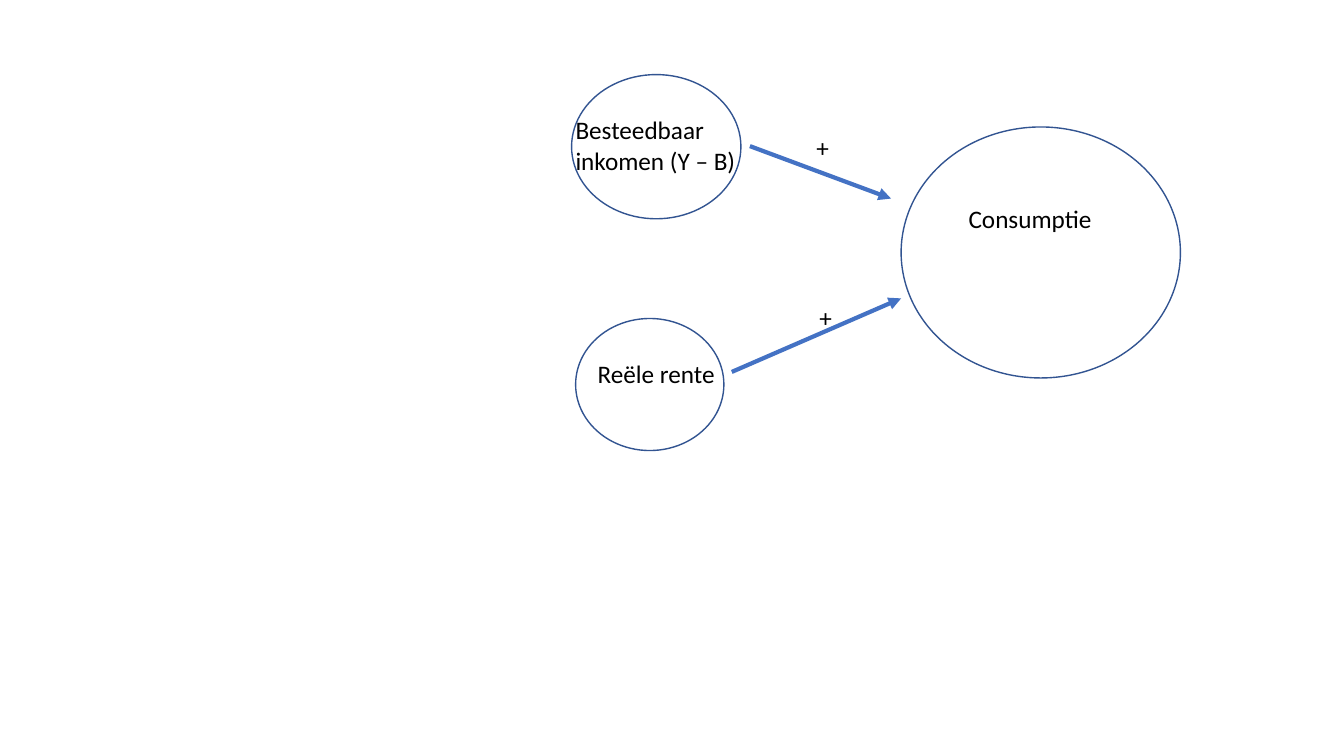
from lxml.etree import SubElement
from pptx import Presentation
from pptx.dml.color import RGBColor
from pptx.enum.shapes import MSO_CONNECTOR, MSO_SHAPE
from pptx.enum.text import MSO_AUTO_SIZE
from pptx.oxml.ns import qn
from pptx.util import Inches, Pt

SLIDE_WIDTH = Inches(13.33)
SLIDE_HEIGHT = Inches(7.5)
COLORS = {"outline": "325491", "arrow": "4472C4", "text": "000000"}
FONT = "Calibri"
LINE_HEIGHT = 5.33


def across(percent):
    return round(SLIDE_WIDTH * percent / 100)


def down(percent):
    return round(SLIDE_HEIGHT * percent / 100)


def box(left, top, width, height):
    return across(left), down(top), across(width), down(height)


def style_line(line, color, width):
    line.color.rgb = RGBColor.from_string(COLORS[color])
    line.width = Pt(width)


def add_circle(slide, bounds):
    shape = slide.shapes.add_shape(MSO_SHAPE.OVAL, *box(*bounds))
    shape.shadow.inherit = False
    shape.fill.background()
    style_line(shape.line, "outline", 1)


def add_label(slide, text, bounds):
    frame = slide.shapes.add_textbox(*box(*bounds)).text_frame
    frame.word_wrap = True
    frame.auto_size = MSO_AUTO_SIZE.SHAPE_TO_FIT_TEXT
    run = frame.paragraphs[0].add_run()
    run.text = text
    run.font.name = FONT
    run.font.size = Pt(18)
    run.font.color.rgb = RGBColor.from_string(COLORS["text"])


def add_factor(slide, text, circle_bounds, label_bounds):
    add_circle(slide, circle_bounds)
    add_label(slide, text, label_bounds)


def add_arrow(slide, start, end):
    connector = slide.shapes.add_connector(
        MSO_CONNECTOR.STRAIGHT,
        across(start[0]), down(start[1]), across(end[0]), down(end[1]),
    )
    style_line(connector.line, "arrow", 3)
    properties = connector.element.spPr
    SubElement(properties.find(qn("a:ln")), qn("a:tailEnd"), type="triangle")
    SubElement(properties, qn("a:effectLst"))


def main():
    presentation = Presentation()
    presentation.slide_width = SLIDE_WIDTH
    presentation.slide_height = SLIDE_HEIGHT
    slide = presentation.slides.add_slide(presentation.slide_layouts[6])

    add_factor(slide, "Consumptie",
               (67.05, 16.8, 20.78, 33.2), (71.33, 26.27, 14.33, LINE_HEIGHT))
    add_factor(slide, "Besteedbaar inkomen (Y – B)",
               (42.53, 9.87, 12.6, 19.07), (42.08, 14.53, 14.25, 9.47))
    add_factor(slide, "Reële rente",
               (42.83, 42.13, 11.03, 17.47), (43.73, 46.8, 11.03, LINE_HEIGHT))

    add_arrow(slide, (55.8, 19.33), (66.3, 26.27))
    add_arrow(slide, (54.45, 49.2), (67.05, 39.47))
    for left, top in ((60, 16.8), (60.23, 39.33)):
        add_label(slide, "+", (left, top, 3.08, LINE_HEIGHT))

    presentation.save("out.pptx")


if __name__ == "__main__":
    main()
